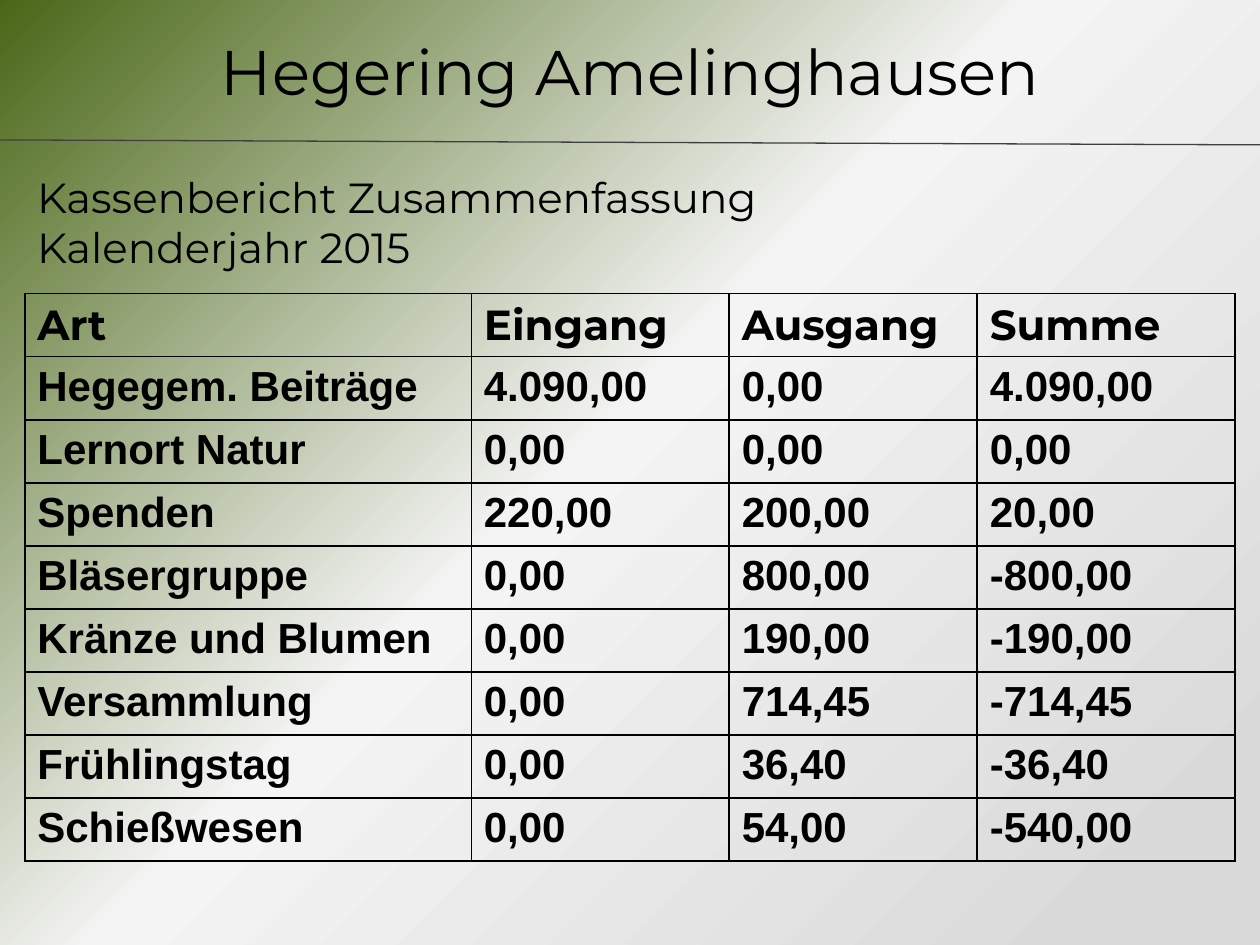
from dataclasses import dataclass

from lxml import etree
from pptx import Presentation
from pptx.dml.color import RGBColor
from pptx.enum.shapes import MSO_CONNECTOR
from pptx.enum.text import PP_ALIGN
from pptx.oxml.ns import qn
from pptx.util import Cm, Pt

LEFT, CENTER = PP_ALIGN.LEFT, PP_ALIGN.CENTER
STRAIGHT = MSO_CONNECTOR.STRAIGHT

COLORS = {
    "green": "4A6717",
    "light": "F4F4F4",
    "gray": "DADADA",
    "rule": "404040",
    "black": "000000",
}
HEADING_FONT, BODY_FONT = "Montserrat", "Arial"
BACKGROUND_STOPS = [(0, "green"), (47, "light"), (92, "gray")]

COLUMN_WIDTHS = [9.0, 5.2, 5.0, 5.2]
ROW_HEIGHT = 1.27
ROWS = [
    ("Art", "Eingang", "Ausgang", "Summe"),
    ("Hegegem. Beiträge", "4.090,00", "0,00", "4.090,00"),
    ("Lernort Natur", "0,00", "0,00", "0,00"),
    ("Spenden", "220,00", "200,00", "20,00"),
    ("Bläsergruppe", "0,00", "800,00", "-800,00"),
    ("Kränze und Blumen", "0,00", "190,00", "-190,00"),
    ("Versammlung", "0,00", "714,45", "-714,45"),
    ("Frühlingstag", "0,00", "36,40", "-36,40"),
    ("Schießwesen", "0,00", "54,00", "-540,00"),
]


@dataclass
class TextBlock:
    text: str
    left: float
    top: float
    width: float
    height: float
    size: int
    align: int


HEADINGS = [
    TextBlock("Hegering Amelinghausen", 0, 0.53, 25.4, 2.57, 36, CENTER),
    TextBlock("Kassenbericht Zusammenfassung Kalenderjahr 2015",
              0.5, 3.33, 19.2, 2.31, 24, LEFT),
]


def add_span(para, text: str, size: int, font: str, bold: bool = False) -> None:
    span = para.add_run()
    span.text = text
    span.font.size = Pt(size)
    span.font.name = font
    span.font.bold = bold
    span.font.color.rgb = RGBColor.from_string(COLORS["black"])


def add_color(parent, color: str) -> None:
    etree.SubElement(parent, qn("a:srgbClr"), val=COLORS[color])


def paint_background(page) -> None:
    fill = page.background.fill
    fill.gradient()
    fill.gradient_angle = 315
    stop_list = next(page.element.iter(qn("a:gsLst")))
    for stop in list(stop_list):
        stop_list.remove(stop)
    for percent, color in BACKGROUND_STOPS:
        stop = etree.SubElement(stop_list, qn("a:gs"), pos=str(percent * 1000))
        add_color(stop, color)


def add_text(page, block: TextBlock) -> None:
    box = page.shapes.add_textbox(Cm(block.left), Cm(block.top),
                                  Cm(block.width), Cm(block.height))
    box.text_frame.word_wrap = True
    para = box.text_frame.paragraphs[0]
    para.alignment = block.align
    add_span(para, block.text, block.size, HEADING_FONT)


def add_rule(page) -> None:
    rule = page.shapes.add_connector(STRAIGHT, Cm(-0.05), Cm(2.82),
                                     Cm(25.4), Cm(2.92))
    rule.line.color.rgb = RGBColor.from_string(COLORS["rule"])
    rule.line.width = Pt(0.75)
    etree.SubElement(rule._element.spPr, qn("a:effectLst"))


def add_borders(cell) -> None:
    properties = cell._tc.get_or_add_tcPr()
    for side in ("lnL", "lnR", "lnT", "lnB"):
        border = etree.SubElement(properties, qn(f"a:{side}"), w=str(Pt(1)))
        add_color(etree.SubElement(border, qn("a:solidFill")), "black")


def add_cash_table(page) -> None:
    frame = page.shapes.add_table(
        len(ROWS), len(COLUMN_WIDTHS), Cm(0.5), Cm(5.92),
        Cm(sum(COLUMN_WIDTHS)), Cm(ROW_HEIGHT * len(ROWS)))
    table = frame.table
    table.first_row = table.horz_banding = False
    for column, width in zip(table.columns, COLUMN_WIDTHS):
        column.width = Cm(width)
    for row_index, values in enumerate(ROWS):
        table.rows[row_index].height = Cm(ROW_HEIGHT)
        font = BODY_FONT if row_index else HEADING_FONT
        for column_index, value in enumerate(values):
            cell = table.cell(row_index, column_index)
            add_borders(cell)
            cell.fill.background()
            add_span(cell.text_frame.paragraphs[0], value, 24, font, bold=True)


def main() -> None:
    deck = Presentation()
    deck.slide_width, deck.slide_height = Cm(25.4), Cm(19.05)
    page = deck.slides.add_slide(deck.slide_layouts[6])

    # Backdrop and the line under the title
    paint_background(page)
    add_rule(page)

    # Title and subtitle
    for block in HEADINGS:
        add_text(page, block)

    # Cash report
    add_cash_table(page)
    deck.save("out.pptx")


if __name__ == "__main__":
    main()
